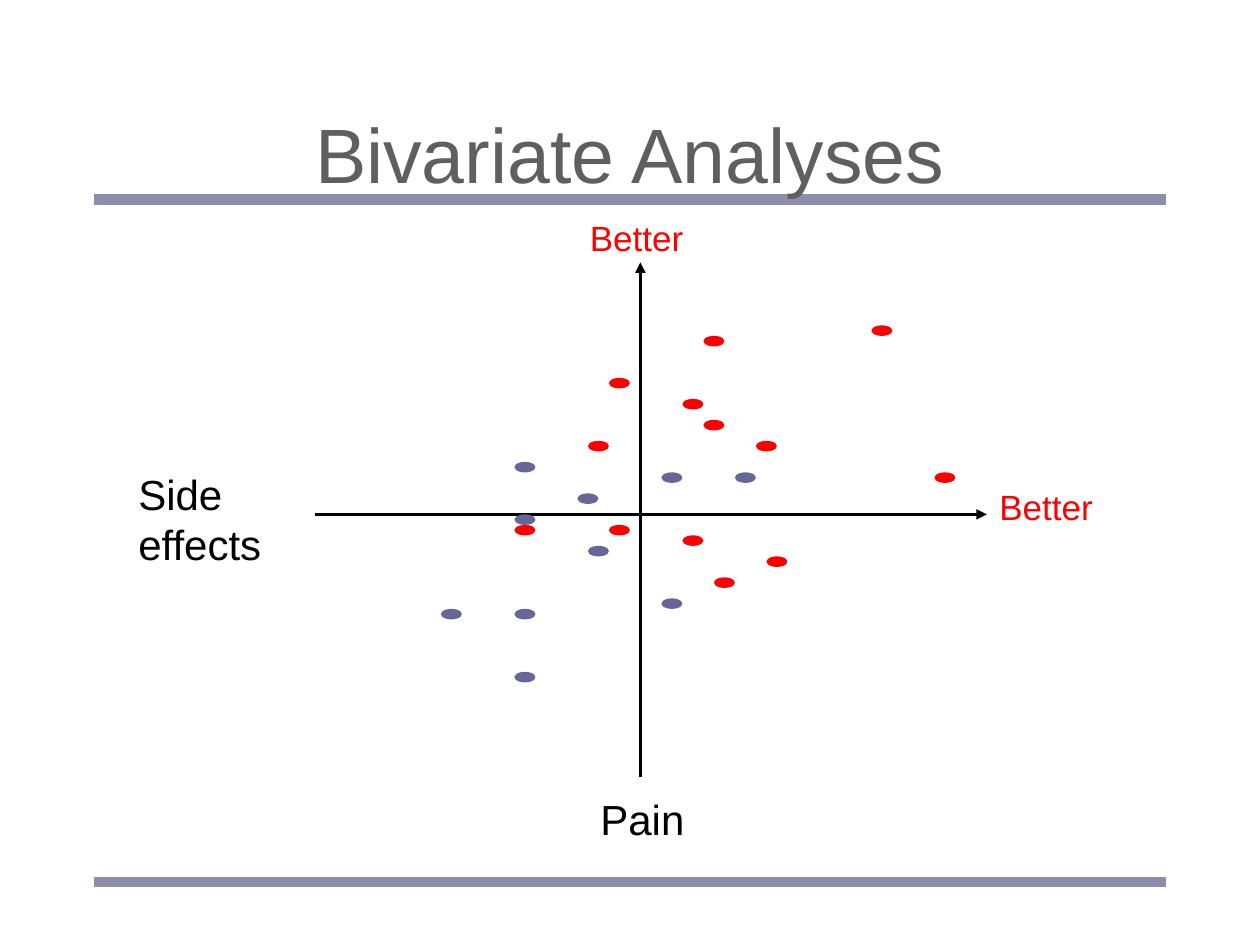
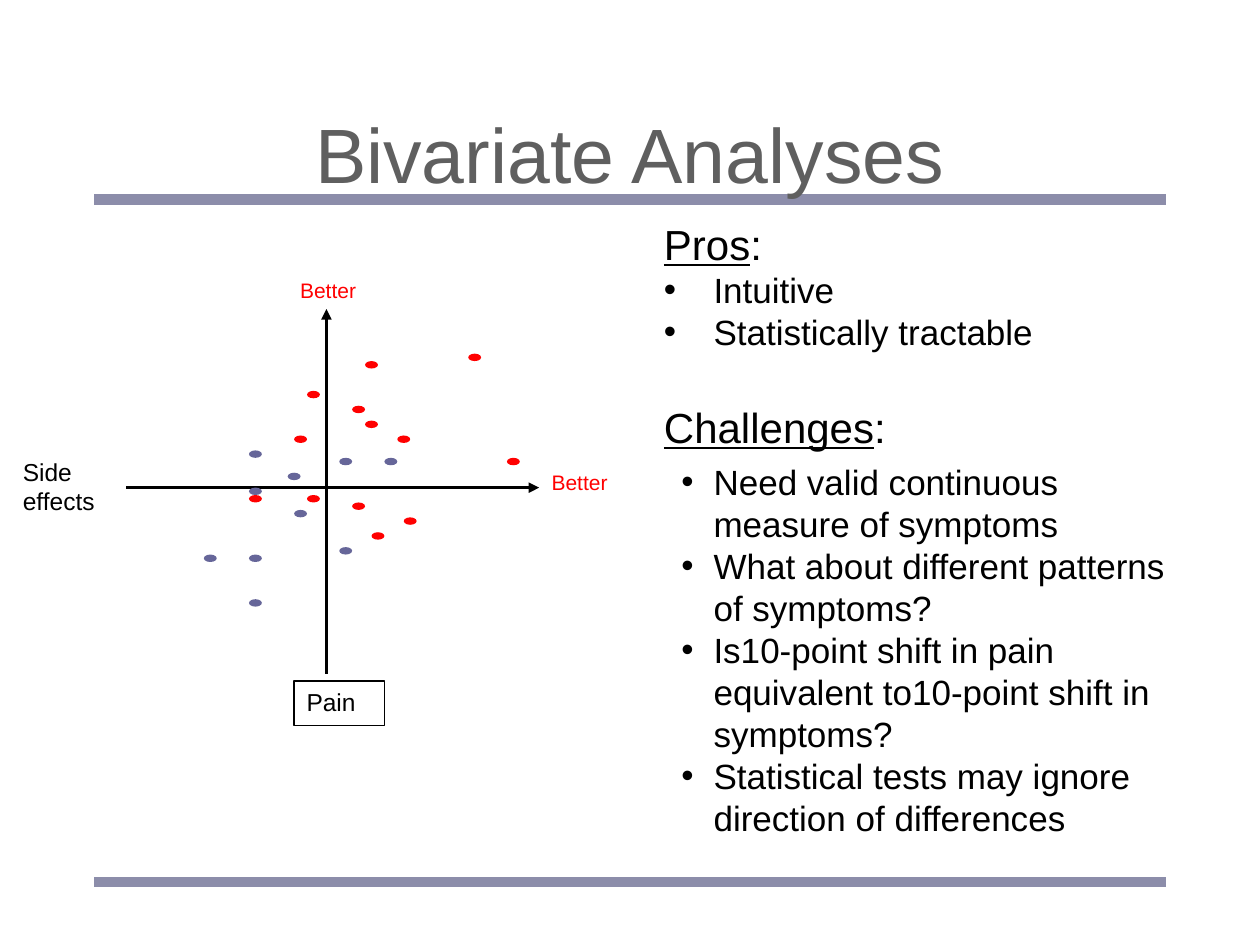
from lxml import etree
from pptx import Presentation
from pptx import util as u
from pptx.dml import color
from pptx.enum import shapes, text
from pptx.oxml import ns

COLORS = {
    "band": "8C8DAA",
    "title": "5F5F5F",
    "ink": "000000",
    "treated": "FF0000",
    "control": "666699",
}
RGB = {name: color.RGBColor.from_string(value) for name, value in COLORS.items()}


def write(paragraph, content, size, ink, underline=False):
    run = paragraph.add_run()
    run.text = content
    values = {"name": "Arial", "size": u.Pt(size), "underline": underline}
    for name, value in values.items():
        setattr(run.font, name, value)
    run.font.color.rgb = RGB[ink]
    spacing = {"line_spacing": u.Pt(1.2 * size), "space_after": u.Pt(0)}
    for name, value in spacing.items():
        setattr(paragraph, name, value)


def draw_line(canvas, ends, ink, width, arrow=False):
    line = canvas.add_connector(
        shapes.MSO_CONNECTOR.STRAIGHT, *[u.Cm(end) for end in ends]
    )
    line.line.color.rgb = RGB[ink]
    line.line.width = u.Pt(width)
    if arrow:
        outline = line.line._get_or_add_ln()
        etree.SubElement(outline, ns.qn("a:tailEnd"), type="triangle")
    etree.SubElement(line.element.spPr, ns.qn("a:effectLst"))
    return line


DOTS = {
    "treated": [
        (6, -17), (4, 2), (11, -7), (28, -4), (22, -18), (4, -11), (-3, -13),
        (12, 4), (-12, 1), (6, -9), (-3, 1), (-5, -7), (7, 6),
    ],
    "control": [
        (2, -4), (-6, -2), (-12, -5), (-12, 9), (-12, 15), (-12, 0),
        (-5, 3), (9, -4), (2, 8), (-19, 9),
    ],
}
AXES = [(0, 25, 0, -24), (-31, 0, 33, 0)]
LABELS = [
    ("Side effects", -49, -5, 16, 11, "ink"),
    ("Pain", -5, 26, 14, 6, "ink"),
    ("Better", -6, -29, 14, 5, "treated"),
    ("Better", 33, -3.3, 14, 5, "treated"),
]
PLOTS = [
    {
        "layout": 5,
        "origin": (12.91, 10.37),
        "unit": (2.54 / 12, 2.54 / 12),
        "sizes": {"ink": 24, "treated": 20},
        "small": False,
    },
    {
        "layout": 1,
        "origin": (6.58, 9.83),
        "unit": (0.13, 0.15),
        "sizes": {"ink": 14, "treated": 12},
        "small": True,
    },
]
LIST = [
    ("Pros", None, 0),
    ("Intuitive", 1, 0),
    ("Statistically tractable", 1, 0),
    ("Challenges", None, 28),
    ("Need valid continuous measure of symptoms", 0.65, 5),
    ("What about different patterns of symptoms?", 0.65, 0),
    ("Is10-point shift in pain equivalent to10-point shift in symptoms?", 0.65, 0),
    ("Statistical tests may ignore direction of differences", 0.65, 0),
]

presentation = Presentation()
presentation.slide_width = u.Cm(25.4)
presentation.slide_height = u.Cm(19.05)

for plot in PLOTS:
    slide = presentation.slides.add_slide(presentation.slide_layouts[plot["layout"]])
    title = slide.shapes.title
    box = {"left": 1.9, "top": 1.48, "width": 21.6, "height": 3.18}
    for name, value in box.items():
        setattr(title, name, u.Cm(value))
    title.text_frame.vertical_anchor = text.MSO_ANCHOR.MIDDLE
    title.text_frame.paragraphs[0].alignment = text.PP_ALIGN.CENTER
    write(title.text_frame.paragraphs[0], "Bivariate Analyses", 44, "title")

    small = plot["small"]
    canvas = slide.shapes.add_group_shape().shapes if small else slide.shapes
    left, top = plot["origin"]
    across, down = plot["unit"]

    for x1, y1, x2, y2 in AXES:
        ends = (left + x1 * across, top + y1 * down,
                left + x2 * across, top + y2 * down)
        draw_line(canvas, ends, "ink", 2, arrow=True)

    for group, places in DOTS.items():
        for x, y in places:
            dot = canvas.add_shape(
                shapes.MSO_SHAPE.OVAL,
                u.Cm(left + x * across), u.Cm(top + y * down),
                u.Cm(2 * across), u.Cm(down),
            )
            dot.shadow.inherit = False
            dot.fill.solid()
            dot.fill.fore_color.rgb = RGB[group]
            dot.line.fill.background()

    for label, x, y, width, height, ink in LABELS:
        textbox = canvas.add_textbox(
            u.Cm(left + x * across), u.Cm(top + y * down),
            u.Cm(width * across), u.Cm(height * down),
        )
        textbox.text_frame.word_wrap = True
        write(textbox.text_frame.paragraphs[0], label, plot["sizes"][ink], ink)
        if small and label == "Pain":
            textbox.line.color.rgb = RGB["ink"]
            textbox.line.width = u.Pt(0.75)

body = slide.placeholders[1]
box = {"left": 13.13, "top": 4.27, "width": 10.8, "height": 12.9}
for name, value in box.items():
    setattr(body, name, u.Cm(value))
frame = body.text_frame
frame.auto_size = text.MSO_AUTO_SIZE.NONE
for index, (content, hang, before) in enumerate(LIST):
    paragraph = frame.add_paragraph() if index else frame.paragraphs[0]
    properties = paragraph._p.get_or_add_pPr()
    properties.set("marL", str(u.Cm(1 if hang else 0)))
    properties.set("indent", str(-u.Cm(hang or 0)))
    if hang:
        etree.SubElement(properties, ns.qn("a:buFont"), typeface="Arial")
        etree.SubElement(properties, ns.qn("a:buChar"), char="•")
        write(paragraph, content, 20, "ink")
    else:
        etree.SubElement(properties, ns.qn("a:buNone"))
        write(paragraph, content, 24, "ink", underline=True)
        write(paragraph, ":", 24, "ink")
    paragraph.space_before = u.Pt(before)

master = presentation.slide_master.shapes
for number, height in enumerate((4.02, 17.78)):
    band = draw_line(slide.shapes, (1.9, height, 23.5, height), "band", 6)
    band.element.nvCxnSpPr.cNvPr.set("id", str(100 + number))
    master.element.insert(2 + number, band.element)

presentation.save("out.pptx")
